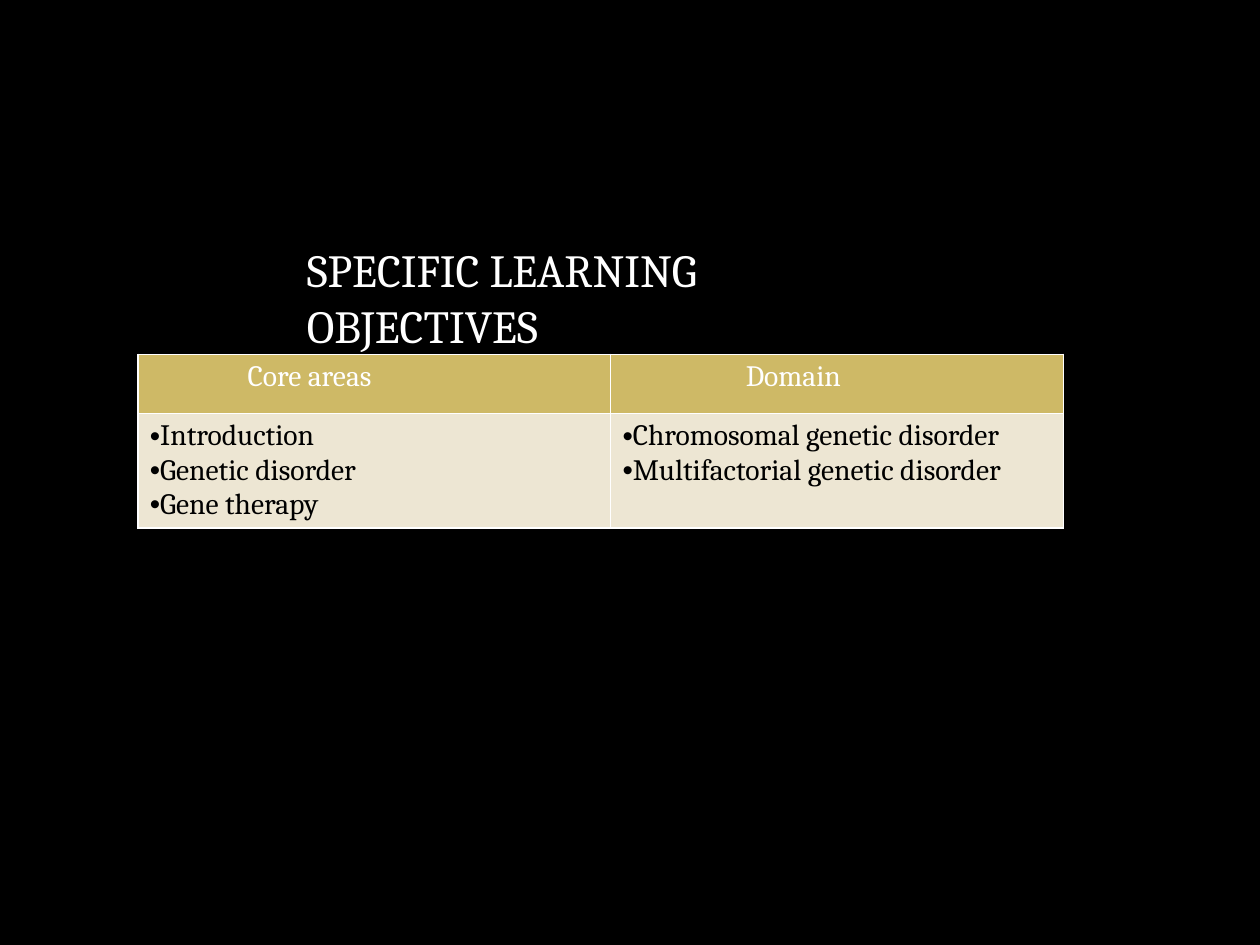
from lxml.etree import SubElement
from pptx import Presentation
from pptx.dml.color import RGBColor as Color
from pptx.oxml.ns import qn
from pptx.util import Cm, Pt

COLORS = {"black": "000000", "white": "FFFFFF", "gold": "CEB966", "cream": "EDE6D3"}


def add_text(paragraph, text, size, color):
    run = paragraph.add_run()
    run.text = text
    run.font.color.rgb = Color.from_string(COLORS[color])
    for name, value in {"name": "Cambria", "size": Pt(size), "bold": False}.items():
        setattr(run.font, name, value)


def style_cell(cell, fill):
    properties = cell._tc.get_or_add_tcPr()
    for side in ("lnL", "lnR", "lnT", "lnB"):
        line = SubElement(properties, qn(f"a:{side}"), w=str(Pt(1)))
        solid = SubElement(line, qn("a:solidFill"))
        SubElement(solid, qn("a:srgbClr"), val=COLORS["white"])
    cell.fill.solid()
    cell.fill.fore_color.rgb = Color.from_string(COLORS[fill])


presentation = Presentation()
presentation.slide_width = Cm(27.09)
presentation.slide_height = Cm(20.32)
slide = presentation.slides.add_slide(presentation.slide_layouts[6])
slide.background.fill.solid()
slide.background.fill.fore_color.rgb = Color.from_string(COLORS["black"])

columns = [
    ("Core areas", 10.16, 2.1, ["Introduction", "Genetic disorder", "Gene therapy"]),
    ("Domain", 9.73, 2.65, ["Chromosomal genetic disorder", "Multifactorial genetic disorder"]),
]
table = slide.shapes.add_table(2, 2, Cm(2.97), Cm(7.62), Cm(19.89), Cm(3.73)).table
table.rows[0].height = Cm(1.27)
table.rows[1].height = Cm(2.46)

for index, (heading, width, indent, topics) in enumerate(columns):
    table.columns[index].width = Cm(width)
    header, body = table.cell(0, index), table.cell(1, index)
    style_cell(header, "gold")
    style_cell(body, "cream")

    paragraph = header.text_frame.paragraphs[0]
    paragraph._p.get_or_add_pPr().set("marL", str(Cm(indent)))
    add_text(paragraph, heading, 18, "white")

    frame = body.text_frame
    for number, topic in enumerate(topics):
        paragraph = frame.add_paragraph() if number else frame.paragraphs[0]
        properties = paragraph._p.get_or_add_pPr()
        SubElement(properties, qn("a:buFont"), typeface="Arial")
        SubElement(properties, qn("a:buChar"), char="•")
        add_text(paragraph, topic, 18, "black")

title = slide.shapes.add_textbox(Cm(6.35), Cm(5.08), Cm(13.39), Cm(1.45))
title.text_frame.word_wrap = True
add_text(title.text_frame.paragraphs[0], "SPECIFIC LEARNING OBJECTIVES", 28, "white")

presentation.save("out.pptx")
